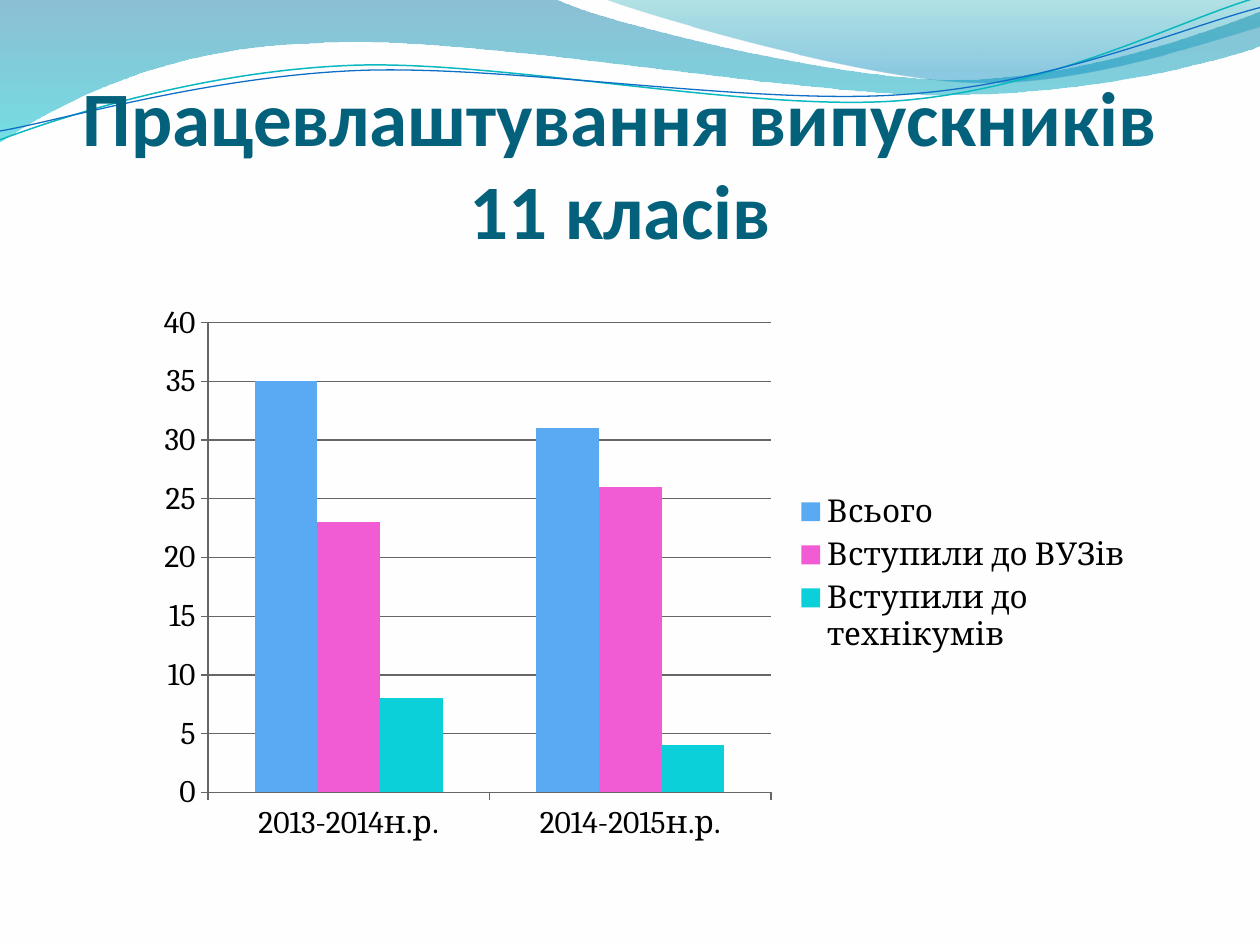
from dataclasses import dataclass
from math import cos, radians, sin

from lxml import etree
from pptx import Presentation
from pptx.chart.data import CategoryChartData
from pptx.dml.color import RGBColor
from pptx.enum.chart import XL_CHART_TYPE, XL_LEGEND_POSITION, XL_TICK_MARK
from pptx.enum.text import MSO_ANCHOR, PP_ALIGN
from pptx.oxml import parse_xml
from pptx.oxml.ns import nsdecls, qn
from pptx.util import Inches, Pt

COLUMNS = XL_CHART_TYPE.COLUMN_CLUSTERED
LEGEND_RIGHT = XL_LEGEND_POSITION.RIGHT
TICK_OUTSIDE, TICK_NONE = XL_TICK_MARK.OUTSIDE, XL_TICK_MARK.NONE
BOTTOM, CENTER = MSO_ANCHOR.BOTTOM, PP_ALIGN.CENTER

COLORS = {
    "background": "FFFEFF", "title": "04617B", "text": "000000", "axis": "666666",
    "deep_blue": "0074A1", "cyan": "00C6CF", "teal": "00A1A9", "blue": "008BBF",
    "teal_line": "0AB8BF", "blue_line": "0F6FC6",
    "total": "59AAF2", "university": "F15BD4", "college": "0BD0D9",
}

Point = tuple[float, float]
Box = tuple[float, float, float, float]


@dataclass
class Stop:
    position: float
    color: str
    opacity: int


@dataclass
class Wave:
    """Outline whose segments hold one end point (line) or three points (Bezier curve)."""
    box: Box
    start: Point
    segments: list[tuple[Point, ...]]
    stops: tuple[Stop, ...] = ()
    line: str = ""
    width: float = 0
    rotation: float = 0


@dataclass
class Series:
    name: str
    values: tuple[int, ...]
    color: str


WAVES = [
    Wave((-0.01, -0.01, 10.02, 1.14), (0, 0), [
        ((4.4, -0.01),),
        ((4.76, 0.17), (6.64, 0.63), (7.58, 0.63)),
        ((8.53, 0.63), (9.58, 0.26), (10, 0.09)),
        ((10.01, 0.36),),
        ((9.83, 0.44), (8.7, 0.76), (7.46, 0.75)),
        ((6.22, 0.75), (3.82, 0.28), (2.57, 0.34)),
        ((1.29, 0.36), (0.46, 0.83), (-0.01, 1.13)),
        ((0, 0),),
    ], stops=(Stop(0, "deep_blue", 45), Stop(1, "cyan", 55))),
    Wave((4.79, -0.01, 5.21, 0.7), (4.79, -0.01), [
        ((5.09, 0.11), (6.82, 0.62), (7.69, 0.65)),
        ((8.56, 0.69), (9.61, 0.32), (10, 0.21)),
        ((10, 0),),
        ((4.79, -0.01),),
    ], stops=(Stop(0, "teal", 30), Stop(0.8, "blue", 45))),
    Wave((-0.02, 0.22, 10.02, 0.71), (0, 1.11), [
        ((0.48, 0.93), (1.58, 0.57), (2.77, 0.52)),
        ((3.95, 0.47), (5.93, 0.89), (7.13, 0.8)),
        ((8.33, 0.71), (9.38, 0.15), (9.98, -0.02)),
    ], line="teal_line", width=0.85, rotation=-2.7),
    Wave((-0.02, 0.3, 10.03, 0.58), (0, 1.04), [
        ((0.47, 0.96), (1.64, 0.61), (2.83, 0.56)),
        ((4.03, 0.51), (5.97, 0.84), (7.17, 0.75)),
        ((8.36, 0.67), (9.41, 0.21), (10, 0.06)),
    ], line="blue_line", width=0.75, rotation=-2.7),
]

YEARS = ["2013-2014н.р.", "2014-2015н.р."]
SERIES = [
    Series("Всього", (35, 31), "total"),
    Series("Вступили до ВУЗів", (23, 26), "university"),
    Series("Вступили до технікумів", (8, 4), "college"),
]
CHART_BOX = (1.14, 2.33, 7.95, 4.44)
PLOT_BOX = (1.65, 2.56, 4.47, 3.73)


def rgb(name: str) -> RGBColor:
    return RGBColor.from_string(COLORS[name])


def to_local(point: Point, wave: Wave) -> Point:
    """Turn a slide point into a point of the wave's box before its rotation."""
    left, top, width, height = wave.box
    dx, dy = point[0] - left - width / 2, point[1] - top - height / 2
    a = radians(-wave.rotation)
    return (dx * cos(a) - dy * sin(a) + width / 2,
            dx * sin(a) + dy * cos(a) + height / 2)


def set_curves(sp, wave: Wave) -> None:
    """Write the outline with true Bezier curves in the box of the wave."""
    sp.left, sp.top, sp.width, sp.height = map(Inches, wave.box)
    outline = next(sp._element.iter(qn("a:path")))
    outline.set("w", str(sp.width))
    outline.set("h", str(sp.height))
    for child in list(outline):
        outline.remove(child)
    steps = [("a:moveTo", (wave.start,))]
    steps += [("a:cubicBezTo" if len(seg) == 3 else "a:lnTo", seg)
              for seg in wave.segments]
    for tag, points in steps:
        step = etree.SubElement(outline, qn(tag))
        for point in points:
            x, y = to_local(point, wave)
            etree.SubElement(step, qn("a:pt"), x=str(Inches(x)), y=str(Inches(y)))
    if wave.stops:
        etree.SubElement(outline, qn("a:close"))


def add_wave(s, wave: Wave) -> None:
    builder = s.shapes.build_freeform(*map(Inches, wave.start))
    ends = [(Inches(x), Inches(y)) for x, y in (seg[-1] for seg in wave.segments)]
    builder.add_line_segments(ends, close=False)
    sp = builder.convert_to_shape()
    set_curves(sp, wave)
    sp.rotation = wave.rotation
    sp.shadow.inherit = False
    if not wave.stops:
        sp.fill.background()
        sp.line.color.rgb = rgb(wave.line)
        sp.line.width = Pt(wave.width)
        return
    sp.line.fill.background()
    sp.fill.gradient()
    sp.fill.gradient_angle = 270
    for target, stop in zip(sp.fill.gradient_stops, wave.stops):
        target.position = stop.position
        target.color.rgb = rgb(stop.color)
    for clr, stop in zip(sp._element.spPr.iter(qn("a:srgbClr")), wave.stops):
        etree.SubElement(clr, qn("a:alpha"), val=str(stop.opacity * 1000))


def add_title(s, text: str) -> None:
    sp = s.shapes.add_textbox(Inches(0.35), Inches(0.77), Inches(9.15), Inches(1.25))
    tf = sp.text_frame
    tf.word_wrap = True
    tf.vertical_anchor = BOTTOM
    tf.margin_left = tf.margin_right = tf.margin_bottom = 0
    tf.margin_top = Inches(0.05)
    tf.text = text
    p = tf.paragraphs[0]
    p.alignment = CENTER
    font = p.runs[0].font
    font.name, font.size, font.bold = "Calibri", Pt(44), True
    font.color.rgb = rgb("title")


def set_plot_layout(chart) -> None:
    """Place the inner plot area, in fractions of the chart."""
    left, top, width, height = CHART_BOX
    x, y, w, h = PLOT_BOX
    fractions = ((x - left) / width, (y - top) / height, w / width, h / height)
    sizes = "".join(f'<c:{tag} val="{value:.4f}"/>'
                    for tag, value in zip("xywh", fractions))
    plot_area = chart._chartSpace.chart.plotArea
    for old in plot_area.findall(qn("c:layout")):
        plot_area.remove(old)
    plot_area.insert(0, parse_xml(
        f'<c:layout {nsdecls("c")}><c:manualLayout><c:layoutTarget val="inner"/>'
        f'<c:xMode val="edge"/><c:yMode val="edge"/>{sizes}'
        '</c:manualLayout></c:layout>'))


def add_graduates_chart(s) -> None:
    data = CategoryChartData()
    data.categories = YEARS
    for series in SERIES:
        data.add_series(series.name, series.values)
    chart = s.shapes.add_chart(COLUMNS, *map(Inches, CHART_BOX), data).chart
    chart.has_title = False
    chart.font.name, chart.font.size = "Cambria", Pt(18)
    chart.font.color.rgb = rgb("text")
    chart.has_legend = True
    chart.legend.position = LEGEND_RIGHT
    chart.legend.include_in_layout = False
    plot = chart.plots[0]
    plot.vary_by_categories = False
    plot.gap_width, plot.overlap = 150, 0
    for drawn, series in zip(plot.series, SERIES):
        drawn.format.fill.solid()
        drawn.format.fill.fore_color.rgb = rgb(series.color)
    chart.value_axis.major_gridlines.format.line.color.rgb = rgb("axis")
    for axis in (chart.category_axis, chart.value_axis):
        axis.major_tick_mark, axis.minor_tick_mark = TICK_OUTSIDE, TICK_NONE
        axis.format.line.color.rgb = rgb("axis")
    set_plot_layout(chart)


def main() -> None:
    prs = Presentation()
    prs.slide_width, prs.slide_height = Inches(10), Inches(7.5)
    s = prs.slides.add_slide(prs.slide_layouts[6])
    s.background.fill.solid()
    s.background.fill.fore_color.rgb = rgb("background")
    for wave in WAVES:
        add_wave(s, wave)
    add_title(s, "Працевлаштування випускників 11 класів")
    add_graduates_chart(s)
    prs.save("out.pptx")


if __name__ == "__main__":
    main()
